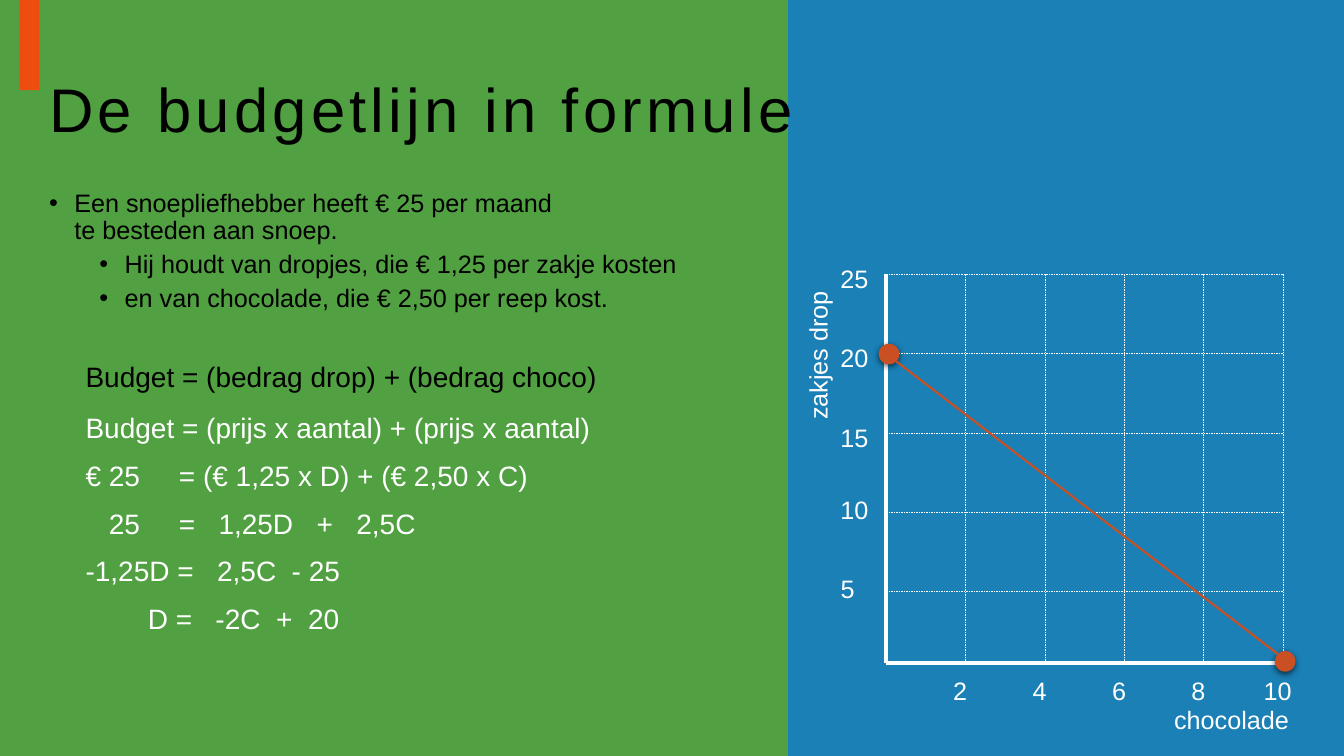
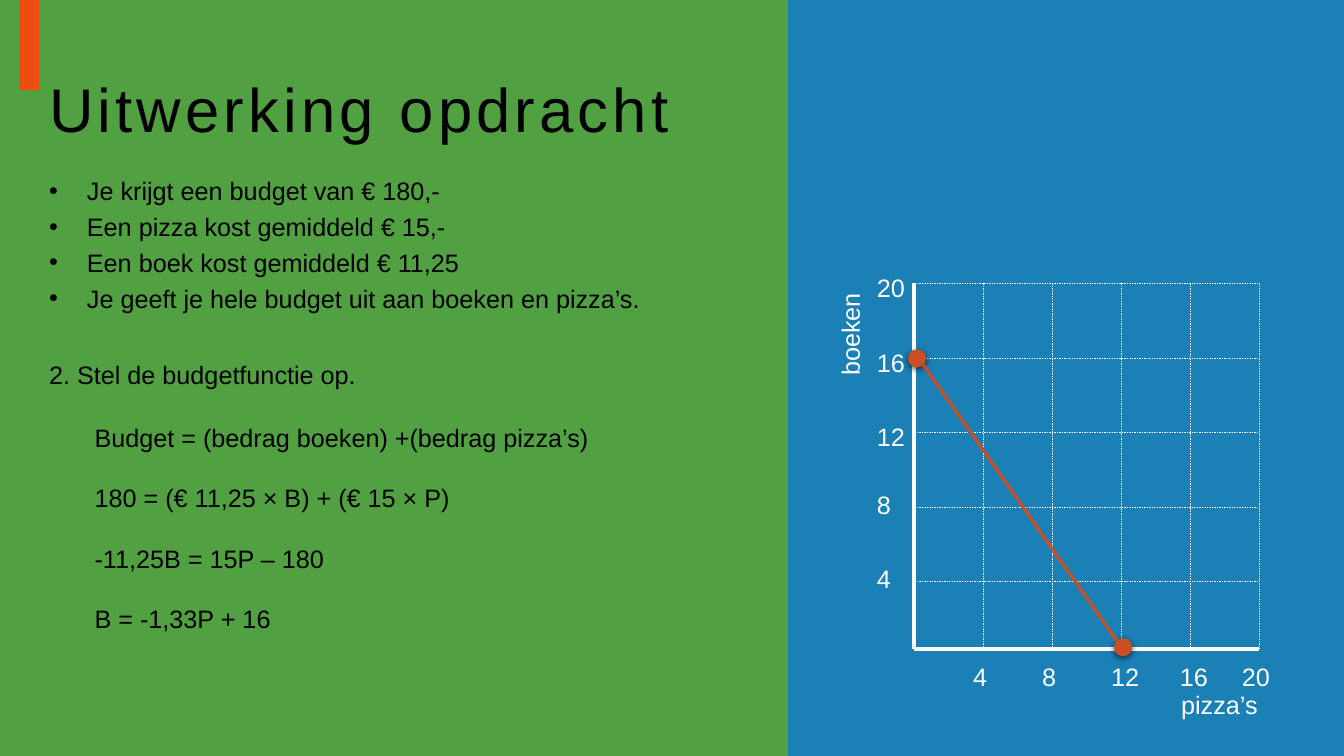
from dataclasses import dataclass

from lxml.etree import SubElement
from pptx import Presentation
from pptx.dml.color import RGBColor
from pptx.enum.dml import MSO_LINE
from pptx.enum.shapes import MSO_CONNECTOR as Connector
from pptx.enum.shapes import MSO_SHAPE as Preset
from pptx.enum.text import MSO_ANCHOR as Anchor
from pptx.oxml.ns import qn
from pptx.util import Pt

GREEN = RGBColor(0x51, 0xA0, 0x41)
BLUE = RGBColor(0x1A, 0x80, 0xB6)
ORANGE = RGBColor(0xED, 0x4D, 0x0F)
RUST = RGBColor(0xCA, 0x4F, 0x22)
WHITE = RGBColor(0xFF, 0xFF, 0xFF)
BLACK = RGBColor(0x00, 0x00, 0x00)
FONT = "Arial"
MARGIN = 28
GRID_COUNT = 5
LABEL_HEIGHT = 29
EQUATION_LEFT = 54
EQUATION_PITCH = 34


@dataclass
class Graph:
    left: float
    top: float
    bottom: float
    step_x: float
    step_y: float
    y_labels: list
    x_labels: list
    y_label_left: float
    x_label_shift: float
    y_name: tuple
    x_name: tuple
    end_column: int
    dot_size: float
    budget_width: float


DROP_GRAPH = Graph(
    left=633, top=195.8, bottom=473.8, step_x=56.7, step_y=56.7,
    y_labels=["25", "20", "15", "10", "5"], x_labels=["2", "4", "6", "8", "10"],
    y_label_left=593.3, x_label_shift=15.9,
    y_name=("zakjes drop", 530.6, 239, 107), x_name=("chocolade", 831.6, 499.7, 97),
    end_column=5, dot_size=14.7, budget_width=1.5)

BOOK_GRAPH = Graph(
    left=653, top=202.3, bottom=463.7, step_x=49.25, step_y=53.3,
    y_labels=["20", "16", "12", "8", "4"], x_labels=["4", "8", "12", "16", "20"],
    y_label_left=619.2, x_label_shift=14.2,
    y_name=("boeken", 570.2, 223.9, 74), x_name=("pizza’s", 836.6, 488.9, 70),
    end_column=3, dot_size=13, budget_width=2.25)


def set_all(target, values):
    for name, value in values.items():
        setattr(target, name, value)


def set_bullet(para, left, hanging):
    props = para._p.get_or_add_pPr()
    props.set("marL", str(Pt(left)))
    props.set("indent", str(-Pt(hanging)))
    SubElement(props, qn("a:buFont"), typeface=FONT)
    SubElement(props, qn("a:buChar"), char="•")


def set_tabs(para, stops):
    tab_list = SubElement(para._p.get_or_add_pPr(), qn("a:tabLst"))
    for stop in stops:
        SubElement(tab_list, qn("a:tab"), pos=str(Pt(stop)), algn="l")


def add_text(page, place, lines, size=18, color=WHITE, wrap=True, **para_format):
    box = page.shapes.add_textbox(*map(Pt, place))
    box.text_frame.word_wrap = wrap
    for index, line in enumerate(lines):
        frame = box.text_frame
        para = frame.add_paragraph() if index else frame.paragraphs[0]
        para.text = line
        set_all(para, para_format)
        for span in para.runs:
            set_all(span.font, {"name": FONT, "size": Pt(size)})
            span.font.color.rgb = color
    return box


def add_solid(page, preset, place, color):
    shape = page.shapes.add_shape(preset, *map(Pt, place))
    shape.shadow.inherit = False
    shape.fill.solid()
    shape.fill.fore_color.rgb = color
    shape.line.fill.background()
    return shape


def add_line(page, start, end, width, color=WHITE, dash=None):
    line = page.shapes.add_connector(Connector.STRAIGHT, *map(Pt, (*start, *end)))
    line.line.color.rgb = color
    set_all(line.line, {"width": Pt(width), "dash_style": dash})
    SubElement(line._element.spPr, qn("a:effectLst"))


def add_dot(page, center, size):
    x, y = center
    dot = add_solid(page, Preset.OVAL, (x - size / 2, y - size / 2, size, size), RUST)
    effects = dot._element.spPr.find(qn("a:effectLst"))
    shadow = SubElement(effects, qn("a:outerShdw"), blurRad=str(Pt(4.5)),
                        dist=str(Pt(1.5)), dir="5400000", rotWithShape="0")
    tint = SubElement(shadow, qn("a:srgbClr"), val=str(BLACK))
    SubElement(tint, qn("a:alpha"), val="63000")


def add_label(page, text, left, top, width=None):
    place = (left, top, width or 14.4 + 10 * len(text), LABEL_HEIGHT)
    return add_text(page, place, [text], wrap=False)


def add_grid(page, graph):
    right = graph.left + GRID_COUNT * graph.step_x
    corner = (graph.left, graph.bottom)
    add_line(page, (graph.left, graph.top), corner, 3)
    add_line(page, (right, graph.bottom), corner, 3)
    for index in range(GRID_COUNT):
        y = graph.top + index * graph.step_y
        x = graph.left + (index + 1) * graph.step_x
        add_line(page, (graph.left, y), (right, y), 0.25, dash=MSO_LINE.DASH)
        add_line(page, (x, graph.top), (x, graph.bottom), 0.25, dash=MSO_LINE.DASH)


def add_axis_labels(page, graph):
    for index, text in enumerate(graph.y_labels):
        lift = 11.3 if index < 3 else 16.5
        add_label(page, text, graph.y_label_left, graph.top + index * graph.step_y - lift)
    for index, text in enumerate(graph.x_labels, 1):
        shift = graph.x_label_shift + (5 if index == GRID_COUNT else 0)
        add_label(page, text, graph.left + index * graph.step_x - shift, graph.bottom + 5.3)
    add_label(page, *graph.x_name)
    add_label(page, *graph.y_name).rotation = 270


def add_budget_line(page, graph):
    start = (graph.left + 2, graph.top + graph.step_y + 0.4)
    end = (graph.left + graph.end_column * graph.step_x + 1.5, graph.bottom - 1.4)
    for center in (start, end):
        add_dot(page, center, graph.dot_size)
    edge = graph.dot_size * 0.35
    add_line(page, [value + edge for value in start], [value - edge for value in end],
             graph.budget_width, RUST)


def add_graph(page, graph):
    add_grid(page, graph)
    add_axis_labels(page, graph)
    add_budget_line(page, graph)


def add_page(deck, title):
    page = deck.slides.add_slide(deck.slide_layouts[6])
    add_solid(page, Preset.RECTANGLE, (0, 0, 563, 540), GREEN)
    add_solid(page, Preset.RECTANGLE, (563, 0, 397, 540), BLUE)
    add_solid(page, Preset.RECTANGLE, (14, 0, 14, 64.5), ORANGE)
    box = add_text(page, (MARGIN, 28, 908, 104.4), [title], 44, BLACK, line_spacing=0.9)
    box.text_frame.vertical_anchor = Anchor.MIDDLE
    for span in box.text_frame.paragraphs[0].runs:
        span.font._element.set("spc", "300")
    return page


def add_equations(page):
    equations = [
        ("Budget = (prijs x aantal) + (prijs x aantal)", []),
        ("€ 25\t= (€ 1,25 x D) + (€ 2,50 x C)", [66.7]),
        ("\t25\t=\t1,25D\t+\t2,5C", [16.7, 66.7, 95, 165, 193.5]),
        ("-1,25D =\t2,5C\t- 25", [94, 147.3]),
        ("\tD =\t-2C\t+\t20", [44.5, 92.8, 136.2, 159]),
    ]
    add_text(page, (EQUATION_LEFT, 255.6, 480, EQUATION_PITCH),
             ["Budget = (bedrag drop) + (bedrag choco)"], 20, BLACK, line_spacing=0.9)
    for index, (text, stops) in enumerate(equations):
        place = (EQUATION_LEFT, 290 + index * EQUATION_PITCH, 480, EQUATION_PITCH)
        box = add_text(page, place, [text], 20)
        if stops:
            set_tabs(box.text_frame.paragraphs[0], stops)


def build_formula_page(deck):
    page = add_page(deck, "De budgetlijn in formule")
    add_equations(page)
    add_graph(page, DROP_GRAPH)
    box = add_text(page, (MARGIN, 132.5, 532, 107), [
        "Een snoepliefhebber heeft € 25 per maand\vte besteden aan snoep.",
        "Hij houdt van dropjes, die € 1,25 per zakje kosten",
        "en van chocolade, die € 2,50 per reep kost.",
    ], color=BLACK, line_spacing=0.9, space_before=Pt(5))
    for level, para in zip((0, 1, 1), box.text_frame.paragraphs):
        para.level = level
        set_bullet(para, 18 + 36 * level, 18)


def build_answer_page(deck):
    page = add_page(deck, "Uitwerking opdracht")
    box = add_text(page, (MARGIN, 121.7, 530, 112), [
        "Je krijgt een budget van € 180,-",
        "Een pizza kost gemiddeld € 15,-",
        "Een boek kost gemiddeld € 11,25",
        "Je geeft je hele budget uit aan boeken en pizza’s.",
    ], color=BLACK, space_before=Pt(4))
    for para in box.text_frame.paragraphs:
        set_bullet(para, 27, 27)
    add_graph(page, BOOK_GRAPH)
    answer = add_text(page, (60.5, 298, 376, 160), [
        "Budget = (bedrag boeken) +(bedrag pizza’s)",
        "180 = (€ 11,25 × B) + (€ 15 × P)",
        "-11,25B = 15P – 180",
        "B = -1,33P + 16",
    ], color=BLACK, space_before=Pt(21.6))
    answer.fill.solid()
    answer.fill.fore_color.rgb = GREEN
    add_text(page, (MARGIN, 253.4, 236, LABEL_HEIGHT), ["2. Stel de budgetfunctie op."],
             color=BLACK, wrap=False)


def main():
    deck = Presentation()
    set_all(deck, {"slide_width": Pt(960), "slide_height": Pt(540)})
    build_formula_page(deck)
    build_answer_page(deck)
    deck.save("out.pptx")


if __name__ == "__main__":
    main()
